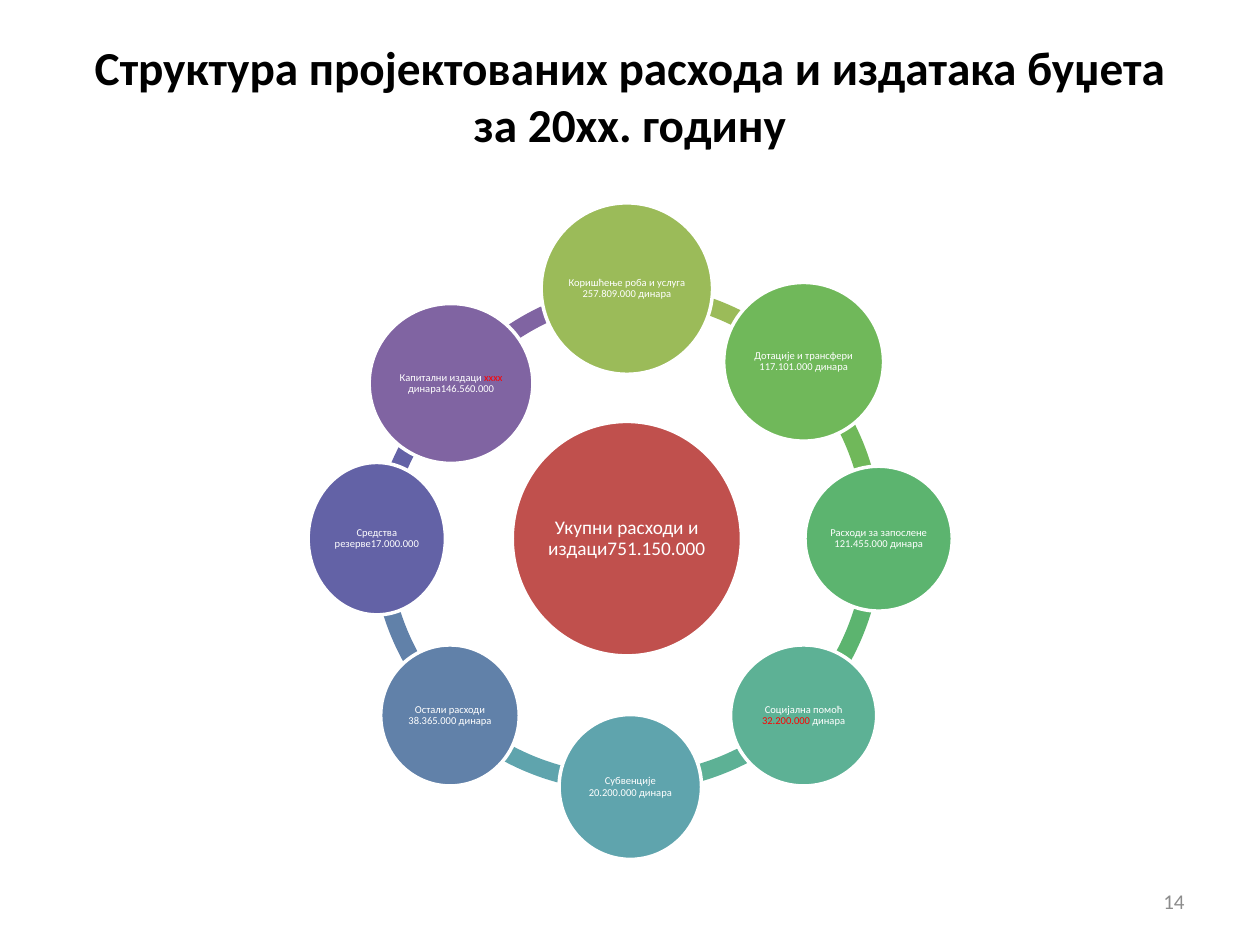
"""Build a slide showing the structure of budget expenditure as a ring of circles."""
from dataclasses import dataclass
from math import cos, radians, sin

from pptx import Presentation
from pptx.dml.color import RGBColor
from pptx.enum.shapes import MSO_SHAPE
from pptx.enum.text import MSO_ANCHOR, MSO_AUTO_SIZE, PP_ALIGN
from pptx.util import Pt


@dataclass(frozen=True)
class Theme:
    font: str = "Calibri"
    title: str = "000000"
    light: str = "FFFFFF"
    alert: str = "FF0000"
    muted: str = "8C8C8C"
    total: str = "C0504D"
    title_size: float = 27
    total_size: float = 11
    node_size: float = 6
    number_size: float = 12


THEME = Theme()
TITLE = "Структура пројектованих расхода и издатака буџета за 20хх. годину"
TOTAL = "Укупни расходи и издаци751.150.000"
PAGE = "14"
CENTER = (358.2, 307.8)
RADIUS = 142.9
RING = 291.6
RING_THICKNESS = 0.034
TOTAL_SIZE = (131, 134)

# text runs (second one in red), colour, size, nudge, arc degrees, arc nudge
NODES = [
    (["Коришћење роба и услуга 257.809.000 динара"], "9BBB59", (98, 98), (0, 0), (270, 315), (0, 0)),
    (["Дотације и трансфери 117.101.000 динара"], "70B85A", (91.4, 90.7), (0, 0), (315, 0), (0, 0)),
    (["Расходи за запослене 121.455.000 динара"], "5CB46F", (84.2, 82.8), (1, 0), (0, 45), (0, 0)),
    (["Социјална помоћ ", "32.200.000 ", "динара"], "5DB195", (83.5, 80.6), (0, 0), (45.9, 89.8), (2, -1.4)),
    (["Субвенције 20.200.000 динара"], "5FA4AD", (81.4, 82.8), (2, -1), (88.5, 134.1), (-1.4, -1.4)),
    (["Остали расходи 38.365.000 динара"], "6181A9", (79.2, 80.6), (0, 0), (135, 180), (0, 0)),
    (["Средства резерве17.000.000"], "6362A6", (78.5, 87.1), (0, 0), (185.8, 225.9), (-0.7, 14.4)),
    (["Капитални издаци ", "xxxx ", "динара146.560.000"], "8064A2", (93.6, 91.4), (0.6, 12.4),
     (217.8, 264.9), (13, -0.7)),
]


def box(center, size, nudge=(0, 0)):
    left, top = (c - s / 2 + n for c, s, n in zip(center, size, nudge))
    return [Pt(v) for v in (left, top, *size)]


def style_run(r, size, color, bold=False):
    r.font.name, r.font.size, r.font.bold = THEME.font, Pt(size), bold
    r.font.color.rgb = RGBColor.from_string(color)


def add_filled(s, kind, bounds, color):
    sp = s.shapes.add_shape(kind, *bounds)
    sp.shadow.inherit = False
    sp.fill.solid()
    sp.fill.fore_color.rgb = RGBColor.from_string(color)
    sp.line.fill.background()
    return sp


def add_arc(s, color, degrees, nudge):
    sp = add_filled(s, MSO_SHAPE.BLOCK_ARC, box(CENTER, (RING, RING), nudge), color)
    start, end = degrees
    for i, value in enumerate((start * 0.6, end * 0.6, RING_THICKNESS)):
        sp.adjustments[i] = value


def add_circle(s, bounds, color, texts, size, inset):
    sp = add_filled(s, MSO_SHAPE.OVAL, bounds, color)
    sp.line.color.rgb = RGBColor.from_string(THEME.light)
    sp.line.width = Pt(2)
    tf = sp.text_frame
    tf.word_wrap = True
    tf.vertical_anchor = MSO_ANCHOR.MIDDLE
    tf.margin_left = tf.margin_right = tf.margin_top = tf.margin_bottom = Pt(inset)
    p = tf.paragraphs[0]
    p.alignment, p.line_spacing = PP_ALIGN.CENTER, 0.9
    for i, text in enumerate(texts):
        r = p.add_run()
        r.text = text
        style_run(r, size, THEME.alert if i == 1 else THEME.light)


def place_text(sp, bounds, text, align, size, color, bold=False):
    sp.left, sp.top, sp.width, sp.height = [Pt(v) for v in bounds]
    tf = sp.text_frame
    tf.text = text
    tf.word_wrap = True
    tf.auto_size = MSO_AUTO_SIZE.NONE
    tf.vertical_anchor = MSO_ANCHOR.MIDDLE
    p = tf.paragraphs[0]
    p.alignment = align
    style_run(p.runs[0], size, color, bold)


def main():
    prs = Presentation()
    prs.slide_width, prs.slide_height = Pt(720), Pt(540)
    s = prs.slides.add_slide(prs.slide_layouts[5])
    place_text(s.shapes.title, (36, 21, 648, 67), TITLE, PP_ALIGN.CENTER,
               THEME.title_size, THEME.title, True)
    for _, color, _, _, degrees, nudge in reversed(NODES):
        add_arc(s, color, degrees, nudge)
    add_circle(s, box(CENTER, TOTAL_SIZE), THEME.total, [TOTAL], THEME.total_size, 1.2)
    for i, (texts, color, size, nudge, _, _) in enumerate(NODES):
        angle = radians(i * 360 / len(NODES) - 90)
        center = (CENTER[0] + RADIUS * cos(angle), CENTER[1] + RADIUS * sin(angle))
        add_circle(s, box(center, size, nudge), color, texts, THEME.node_size, 0.6)
    bounds = (516, 500.5, 168, 28.8)
    number = s.shapes.add_textbox(*[Pt(v) for v in bounds])
    place_text(number, bounds, PAGE, PP_ALIGN.RIGHT, THEME.number_size, THEME.muted)
    prs.save("out.pptx")


if __name__ == "__main__":
    main()
